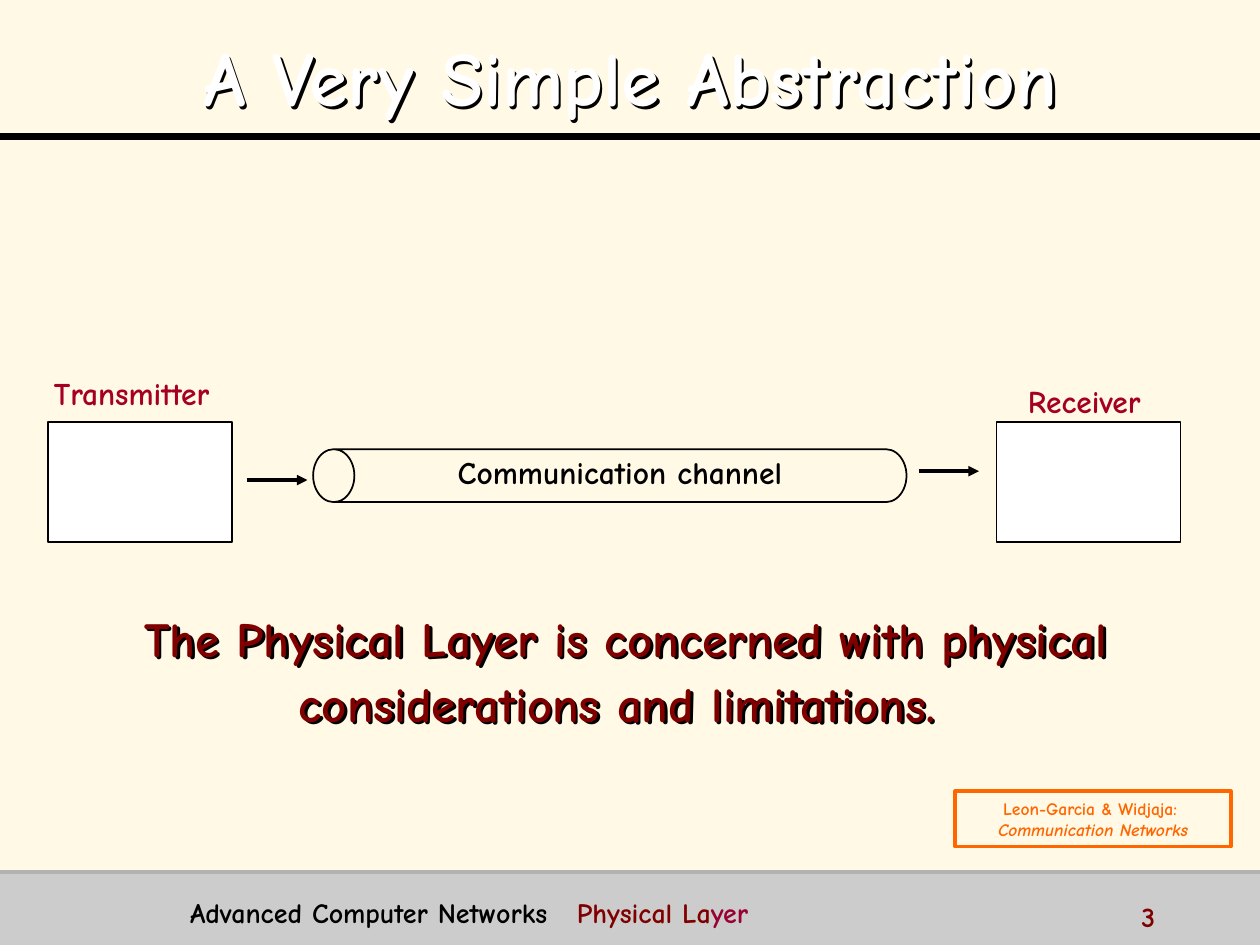
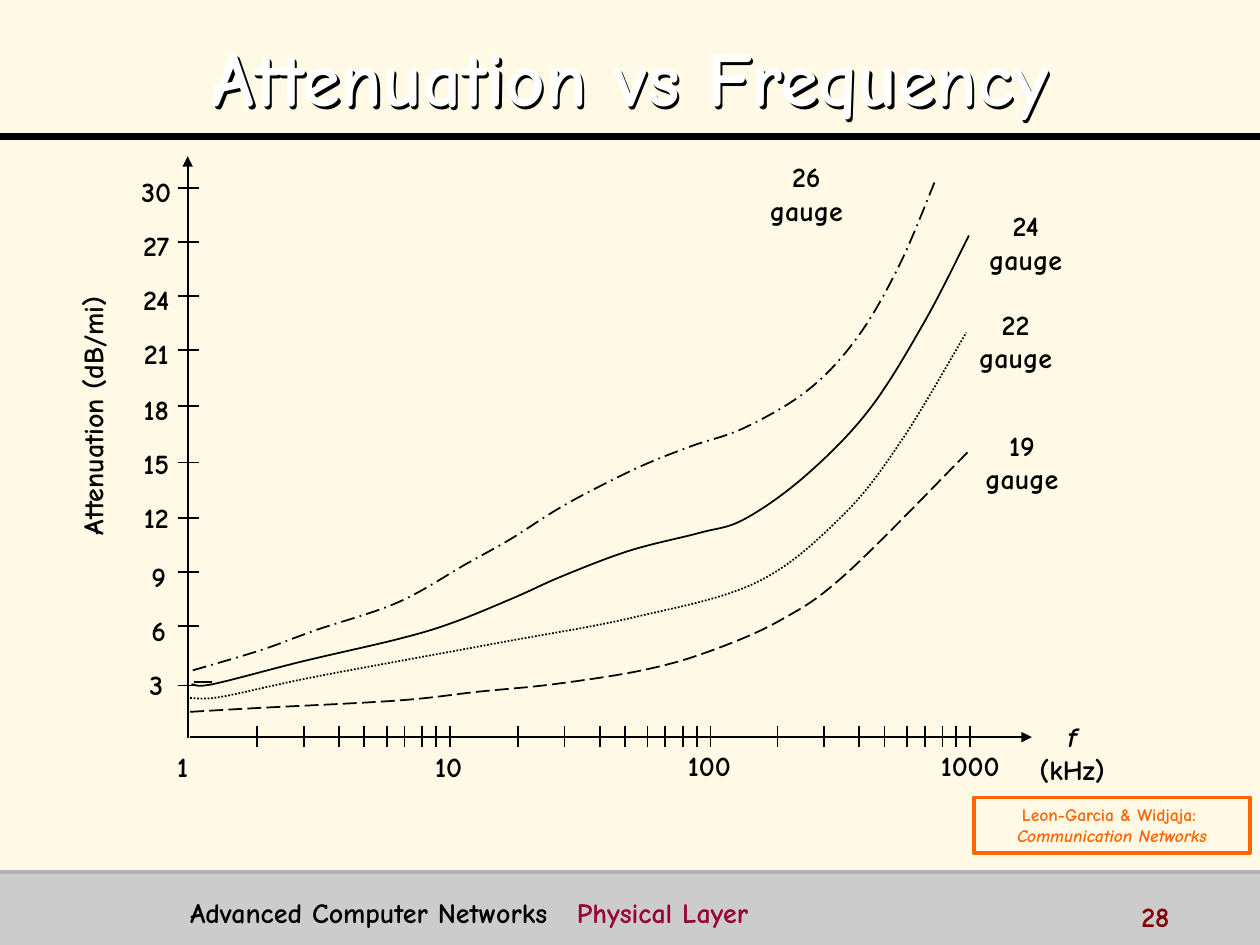
"""Build two slides on the physical layer: a channel sketch and an attenuation plot."""
from lxml import etree
from pptx import Presentation
from pptx.dml.color import RGBColor
from pptx.enum import dml, shapes, text
from pptx.oxml import ns
from pptx.util import Inches, Pt

FONT = "Comic Neue"
CREAM, GREY, EDGE = "FFF9E6", "CCCCCC", "B2B2B2"
BLACK, WHITE, ORANGE = "000000", "FFFFFF", "FF6600"
MAROON, WINE, RED = "800000", "990033", "A50021"
LEFT, MID = text.PP_ALIGN.LEFT, text.PP_ALIGN.CENTER
TOP, HALF = text.MSO_ANCHOR.TOP, text.MSO_ANCHOR.MIDDLE
RECT, CAN = shapes.MSO_SHAPE.RECTANGLE, shapes.MSO_SHAPE.CAN
DASH = dml.MSO_LINE

COURSE = "Advanced Computer Networks"
SOURCE = ["Leon-Garcia & Widjaja: ", "Communication Networks"]
CLAIM = "The Physical Layer is concerned with physical considerations and limitations. "

ENDS = [
    ("Transmitter", 0.38, (0.25, 2.92, 1.59, 0.4)),
    ("Receiver", 7.91, (8.02, 2.98, 1.17, 0.4)),
]
ARROWS = [(1.96, 3.81), (7.29, 3.74)]

LEVELS = [
    ("30", 1.49, 0.95, 1.33), ("27", 1.92, 0.95, 1.76), ("24", 2.35, 0.95, 2.19),
    ("21", 2.78, 0.95, 2.62), ("18", 3.22, 0.95, 3.06), ("15", 3.67, 0.95, 3.49),
    ("12", 4.11, 0.95, 3.92), ("9", 4.54, 0.97, 4.39), ("6", 4.97, 0.97, 4.82),
    ("3", 5.44, 0.95, 5.25),
]
STEPS = [0.54, 0.91, 1.19, 1.39, 1.57, 1.71, 1.85, 1.96, 2.07]
DECADES = [1.5, 3.57, 5.63]
FREQS = [("1", 1.45, 5.9), ("10", 3.56, 5.9), ("100", 5.63, 5.89), ("1000", 7.7, 5.89)]
GAUGES = [
    ("26", (6.01, 1.22), DASH.LONG_DASH_DOT, [
        (1.53, 5.32), (2.07, 5.16), (2.51, 5), (3.16, 4.78), (3.71, 4.47),
        (4.05, 4.28), (4.41, 4.05), (4.72, 3.88), (5.11, 3.69), (5.49, 3.54),
        (5.92, 3.39), (6.42, 3.09), (6.81, 2.67), (7.14, 2.1), (7.42, 1.44)]),
    ("24", (7.75, 1.61), DASH.SOLID, [
        (1.52, 5.43), (1.69, 5.43), (2.4, 5.25), (3.17, 5.07), (3.6, 4.94),
        (4.09, 4.74), (4.47, 4.57), (5, 4.37), (5.55, 4.23), (5.91, 4.12),
        (6.4, 3.77), (6.9, 3.25), (7.34, 2.55), (7.69, 1.87)]),
    ("22", (7.67, 2.39), DASH.ROUND_DOT, [
        (1.51, 5.54), (1.76, 5.53), (2.51, 5.37), (3.97, 5.1), (5.03, 4.9),
        (6.01, 4.62), (6.69, 4.09), (7.16, 3.49), (7.67, 2.64)]),
    ("19", (7.72, 3.35), DASH.LONG_DASH, [
        (1.51, 5.65), (2.04, 5.62), (3.16, 5.56), (3.8, 5.49), (4.4, 5.43),
        (5.1, 5.32), (5.63, 5.17), (6.2, 4.92), (6.72, 4.55), (7.68, 3.59)]),
]


def rgb(hue):
    return RGBColor.from_string(hue)


def style(par, size, hue, align=LEFT):
    par.alignment = align
    font = par.font
    font.name, font.size, font.bold = FONT, Pt(size), True
    font.color.rgb = rgb(hue)


def write(slide, box, words, size, hue=BLACK, align=MID, anchor=TOP):
    item = slide.shapes.add_textbox(*map(Inches, box))
    frame = item.text_frame
    frame.word_wrap, frame.vertical_anchor = True, anchor
    par = frame.paragraphs[0]
    par.text = words
    style(par, size, hue, align)
    return item


def shade(item):
    item.text_frame.paragraphs[0].line_spacing = 1.1
    fx = etree.SubElement(item._element.spPr, ns.qn("a:effectLst"))
    cast = etree.SubElement(fx, ns.qn("a:outerShdw"), dist="25400", dir="2700000")
    etree.SubElement(cast, ns.qn("a:srgbClr"), val=BLACK)


def block(slide, kind, box, fill=None, edge=None, width=1):
    item = slide.shapes.add_shape(kind, *map(Inches, box))
    item.shadow.inherit = False
    if fill:
        item.fill.solid()
        item.fill.fore_color.rgb = rgb(fill)
    else:
        item.fill.background()
    if edge:
        item.line.color.rgb = rgb(edge)
        item.line.width = Pt(width)
    else:
        item.line.fill.background()
    return item


def rule(slide, start, end, hue=BLACK, width=1, arrow=False):
    item = slide.shapes.add_connector(
        shapes.MSO_CONNECTOR.STRAIGHT, *map(Inches, (*start, *end)))
    item.line.color.rgb = rgb(hue)
    item.line.width = Pt(width)
    prop = item._element.spPr
    if arrow:
        etree.SubElement(prop.find(ns.qn("a:ln")), ns.qn("a:tailEnd"), type="triangle")
    etree.SubElement(prop, ns.qn("a:effectLst"))


def bend(item):
    spots = [(int(p.get("x")), int(p.get("y"))) for p in item._element.iter(ns.qn("a:pt"))]
    pad = [spots[0], *spots, spots[-1]]
    legs = list(item._element.iter(ns.qn("a:lnTo")))
    for leg, a, b, c, d in zip(legs, pad, pad[1:], pad[2:], pad[3:]):
        leg.tag = ns.qn("a:cubicBezTo")
        out = [q + (r - p) / 6 for p, q, r in zip(a, b, c)]
        back = [q - (r - p) / 6 for p, q, r in zip(b, c, d)]
        for i, (x, y) in enumerate([out, back]):
            knob = etree.Element(ns.qn("a:pt"), x=str(round(x)), y=str(round(y)))
            leg.insert(i, knob)


def curve(slide, knots, dash):
    dots = [tuple(map(Inches, knot)) for knot in knots]
    build = slide.shapes.build_freeform(*dots[0])
    build.add_line_segments(dots[1:], close=False)
    item = build.convert_to_shape()
    bend(item)
    item.shadow.inherit = False
    item.fill.background()
    item.line.color.rgb = rgb(BLACK)
    item.line.width = Pt(1)
    item.line.dash_style = dash


def cite(slide, left, top):
    item = block(slide, RECT, (left, top, 2.19, 0.44), None, ORANGE, 2)
    frame = item.text_frame
    frame.word_wrap, frame.vertical_anchor = True, HALF
    frame.text = "\n".join(SOURCE)
    for par in frame.paragraphs:
        style(par, 10, ORANGE, MID)
    frame.paragraphs[1].font.italic = True


def start(deck, title, page, topic):
    slide = deck.slides.add_slide(deck.slide_layouts[6])
    slide.background.fill.solid()
    slide.background.fill.fore_color.rgb = rgb(CREAM)
    block(slide, RECT, (0, 6.92, 10, 0.58), GREY)
    rule(slide, (0, 1.08), (10, 1.08), width=4)
    rule(slide, (0, 6.92), (10, 6.92), EDGE, 2)
    shade(write(slide, (0.2, 0.13, 9.61, 0.87), title, 44, WHITE, anchor=HALF))
    foot = slide.shapes.add_textbox(*map(Inches, (1.41, 7.06, 7.28, 0.31)))
    foot.text_frame.word_wrap = True
    par = foot.text_frame.paragraphs[0]
    tabs = etree.SubElement(par._p.get_or_add_pPr(), ns.qn("a:tabLst"))
    etree.SubElement(tabs, ns.qn("a:tab"), pos=str(Inches(3.07)), algn="l")
    style(par, 16, BLACK)
    for words, hue in [(COURSE + "\t", BLACK), *topic]:
        run = par.add_run()
        run.text = words
        run.font.color.rgb = rgb(hue)
    write(slide, (8.96, 7.09, 1, 0.25), str(page), 16, MAROON, LEFT)
    return slide


def channel(deck):
    slide = start(deck, "A Very Simple Abstraction", 3,
                  [("Physical La", MAROON), ("yer", WINE)])
    for name, left, spot in ENDS:
        block(slide, RECT, (left, 3.35, 1.46, 0.95), WHITE, BLACK)
        write(slide, spot, name, 18, RED)
    pipe = block(slide, CAN, (4.63, 1.42, 0.42, 4.71), None, BLACK)
    pipe.adjustments[0] = 0.78
    pipe.rotation = 270
    write(slide, (3.28, 3.55, 3.28, 0.4), "Communication channel", 18)
    for x, y in ARROWS:
        rule(slide, (x, y), (x + 0.48, y), width=2, arrow=True)
    cite(slide, 7.58, 6.28)
    shade(write(slide, (0.16, 4.64, 9.61, 1.31), CLAIM, 28, MAROON, anchor=HALF))


def plot(deck):
    slide = start(deck, "Attenuation vs Frequency", 28, [("Physical Layer", WINE)])
    rule(slide, (1.51, 5.85), (8.19, 5.85), arrow=True)
    rule(slide, (1.49, 5.86), (1.49, 1.24), arrow=True)
    for gauge, (x, y), dash, knots in GAUGES:
        curve(slide, knots, dash)
        write(slide, (x - 0.05, y, 0.88, 0.64), gauge + "\vgauge", 16)
    for level, tick, x, y in LEVELS:
        rule(slide, (1.41, tick), (1.58, tick))
        write(slide, (x, y, 0.58, 0.37), level, 16, anchor=HALF)
    rule(slide, (1.68, 5.41), (1.54, 5.41))
    for base in DECADES:
        for step in STEPS:
            rule(slide, (base + step, 5.93), (base + step, 5.76))
    for freq, x, y in FREQS:
        write(slide, (x - 0.46, y, 0.92, 0.37), freq, 16, anchor=HALF)
    side = write(slide, (-0.44, 3.12, 2.34, 0.36), "Attenuation (dB/mi)", 16)
    side.rotation = 270
    unit = write(slide, (8.06, 5.66, 0.9, 0.64), "f\v(kHz)", 16)
    unit.text_frame.paragraphs[0].runs[0].font.italic = True
    cite(slide, 7.73, 6.33)


def main():
    deck = Presentation()
    deck.slide_width, deck.slide_height = Inches(10), Inches(7.5)
    channel(deck)
    plot(deck)
    deck.save("out.pptx")


if __name__ == "__main__":
    main()
